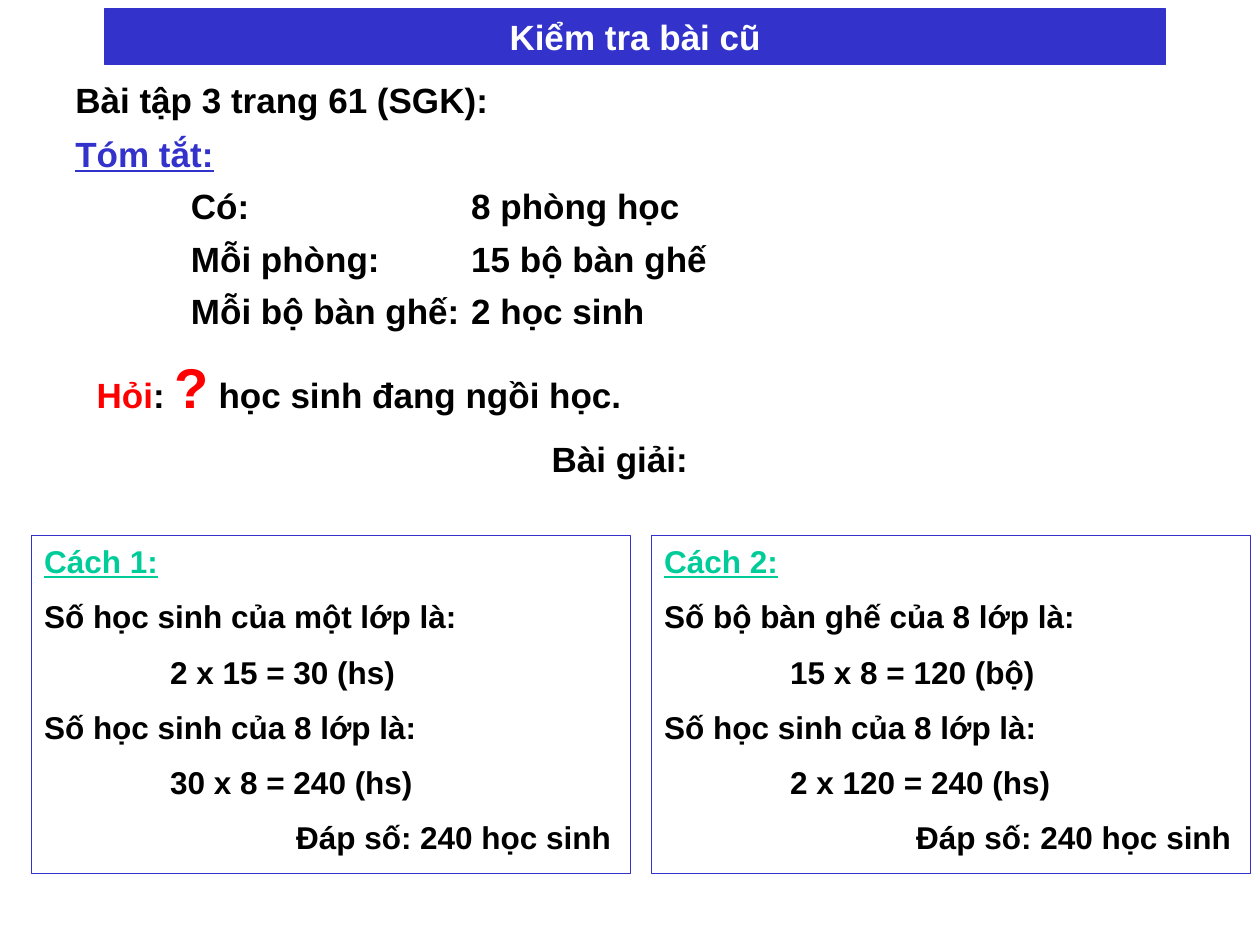
"""Build the lesson review slide: a problem summary and two worked solutions."""
from dataclasses import dataclass

from lxml.etree import SubElement
from pptx import Presentation
from pptx.dml.color import RGBColor
from pptx.enum.shapes import MSO_SHAPE as Shape
from pptx.enum.text import MSO_ANCHOR as Anchor, PP_ALIGN as Align
from pptx.oxml.ns import qn
from pptx.util import Cm, Pt


@dataclass(frozen=True)
class Theme:
    font: str = "Arial"
    blue: str = "3333CC"
    green: str = "00CC99"
    red: str = "FF0000"
    black: str = "000000"
    white: str = "FFFFFF"
    body: int = 20
    solution: int = 18
    question: int = 32
    border: float = 0.75
    gap: int = 10


THEME = Theme()
LINE_HEIGHT = 1.12
TITLE = "Kiểm tra bài cũ"
EXERCISE = "Bài tập 3 trang 61 (SGK):"
SUMMARY = "Tóm tắt:"
FACTS = [
    ("Có:", "8 phòng học"),
    ("Mỗi phòng:", "15 bộ bàn ghế"),
    ("Mỗi bộ bàn ghế:", "2 học sinh"),
]
QUESTION = [
    ("Hỏi", THEME.red, THEME.body),
    (": ", THEME.black, THEME.body),
    ("?", THEME.red, THEME.question),
    (" học sinh đang ngồi học.", THEME.black, THEME.body),
]
ANSWER = "Bài giải:"
SOLUTIONS = [
    ("Cách 1:", [
        (0, "Số học sinh của một lớp là:"),
        (1, "2 x 15 = 30 (hs)"),
        (0, "Số học sinh của 8 lớp là:"),
        (1, "30 x 8 = 240 (hs)"),
        (2, "Đáp số: 240 học sinh"),
    ]),
    ("Cách 2:", [
        (0, "Số bộ bàn ghế của 8 lớp là:"),
        (1, "15 x 8 = 120 (bộ)"),
        (0, "Số học sinh của 8 lớp là:"),
        (1, "2 x 120 = 240 (hs)"),
        (2, "Đáp số: 240 học sinh"),
    ]),
]


def style(font, color=THEME.black, size=THEME.body, underline=False):
    font.name = THEME.font
    font.size = Pt(size)
    font.bold = True
    font.underline = underline
    font.color.rgb = RGBColor.from_string(color)


def place(shape, left, top, width, height):
    shape.left, shape.top, shape.width, shape.height = map(Cm, (left, top, width, height))


def outline(shape):
    shape.line.color.rgb = RGBColor.from_string(THEME.blue)
    shape.line.width = Pt(THEME.border)


def add_text(page, left, top, width, text="", height=LINE_HEIGHT, align=Align.LEFT, tab=None, **look):
    box = page.shapes.add_textbox(Cm(left), Cm(top), Cm(width), Cm(height))
    box.text_frame.word_wrap = True
    para = box.text_frame.paragraphs[0]
    para.text = text
    para.alignment = align
    if tab:
        tabs = SubElement(para._p.get_or_add_pPr(), qn("a:tabLst"))
        SubElement(tabs, qn("a:tab"), pos=str(Cm(tab)), algn="l")
    style(para.font, **look)
    return para


def add_title(page):
    title = page.shapes.title
    place(title, 2.11, 0.18, 21.39, LINE_HEIGHT)
    title.fill.solid()
    title.fill.fore_color.rgb = RGBColor.from_string(THEME.blue)
    outline(title)
    title.text_frame.text = TITLE
    title.text_frame.vertical_anchor = Anchor.MIDDLE
    para = title.text_frame.paragraphs[0]
    para.alignment = Align.CENTER
    style(para.font, THEME.white)


def add_question(page):
    para = add_text(page, 1.7, 6.98, 13.13, height=1.63)
    for text, color, size in QUESTION:
        span = para.add_run()
        span.text = text
        style(span.font, color, size)


def add_solution(page, left, heading, steps):
    box = page.shapes.add_shape(Shape.RECTANGLE, Cm(left), Cm(10.8), Cm(12.07), Cm(6.81))
    box.shadow.inherit = False
    box.fill.background()
    outline(box)
    frame = box.text_frame
    frame.word_wrap = True
    frame.vertical_anchor = Anchor.TOP
    para = frame.paragraphs[0]
    para.text = heading
    para.alignment = Align.LEFT
    style(para.font, THEME.green, THEME.solution, underline=True)
    for depth, text in steps:
        para = frame.add_paragraph()
        para.text = text
        para.alignment = Align.LEFT
        para.space_before = Pt(THEME.gap)
        para._p.get_or_add_pPr().set("marL", str(Cm(2.54 * depth)))
        style(para.font, size=THEME.solution)


def main():
    deck = Presentation()
    deck.slide_width, deck.slide_height = Cm(25.4), Cm(19.05)
    page = deck.slides.add_slide(deck.slide_layouts[5])
    add_title(page)
    add_text(page, 1.27, 1.45, 24.13, EXERCISE)
    add_text(page, 1.27, 2.54, 4.66, SUMMARY, color=THEME.blue, underline=True)
    for row, (label, value) in enumerate(FACTS):
        add_text(page, 3.6, 3.6 + 1.06 * row, 13.13, f"{label}\t{value}", tab=5.65)
    add_question(page)
    add_text(page, 0.43, 8.69, 24.13, ANSWER, align=Align.CENTER)
    for column, (heading, steps) in enumerate(SOLUTIONS):
        add_solution(page, 0.64 + 12.5 * column, heading, steps)
    deck.save("out.pptx")


if __name__ == "__main__":
    main()
